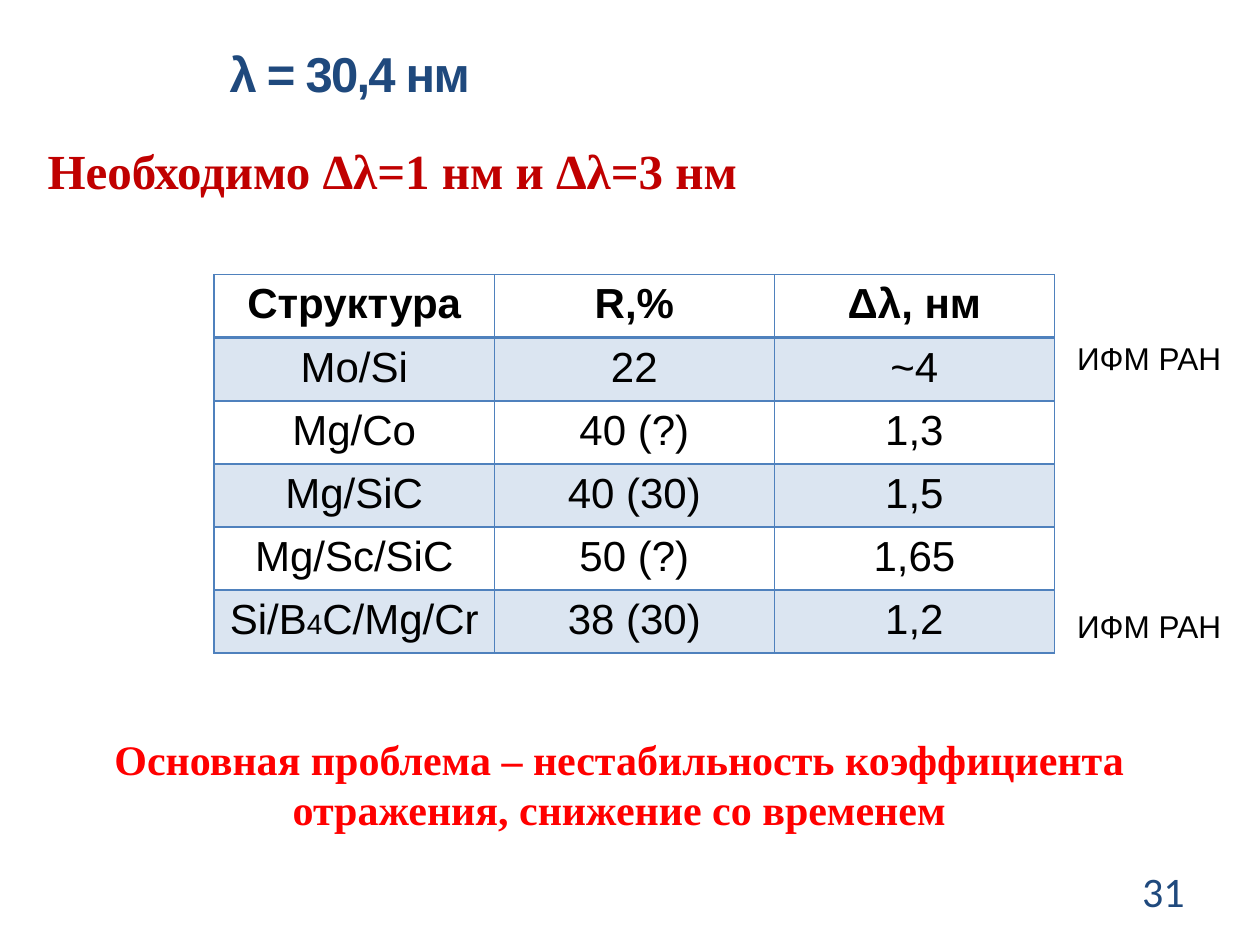
from dataclasses import dataclass

from lxml.etree import SubElement
from pptx import Presentation
from pptx.dml.color import RGBColor
from pptx.enum.text import MSO_ANCHOR as Anchor, PP_ALIGN as Align
from pptx.oxml import parse_xml
from pptx.oxml.ns import nsdecls, qn
from pptx.util import Inches, Pt


@dataclass(frozen=True)
class Theme:
    navy: str = "1F497D"
    crimson: str = "C00000"
    red: str = "FF0000"
    black: str = "000000"
    accent: str = "4F81BD"
    band_alpha: int = 20
    heading: int = 28
    body: int = 24
    label: int = 18
    subscript: int = 16
    sans: str = "Arial"
    serif: str = "Times New Roman"
    number: str = "Calibri"


THEME = Theme()
UNIT = Inches(0.1)  # the slide is a grid of 100 columns by 75 rows
COLUMNS, ROWS = 100, 75

TABLE_LEFT, TABLE_TOP = 17, 21.8
CELL_WIDTH, CELL_HEIGHT = 22.23, 5
TABLE_ROWS = [
    ("Структура", "R,%", "Δλ, нм"),
    ("Mo/Si", "22", "~4"),
    ("Mg/Co", "40 (?)", "1,3"),
    ("Mg/SiC", "40 (30)", "1,5"),
    ("Mg/Sc/SiC", "50 (?)", "1,65"),
    (("Si/B", "4", "C/Mg/Cr"), "38 (30)", "1,2"),
]


def grid(*lengths):
    return [round(length * UNIT) for length in lengths]


def add_run(paragraph, text, color, **font_format):
    run = paragraph.add_run()
    run.text = text
    for name, value in font_format.items():
        setattr(run.font, name, value)
    run.font.color.rgb = RGBColor.from_string(color)
    return run


def add_text(slide, box, text, color, align=Align.LEFT, anchor=Anchor.TOP,
             wrap=True, **font_format):
    frame = slide.shapes.add_textbox(*grid(*box)).text_frame
    frame.word_wrap = wrap
    frame.vertical_anchor = anchor
    paragraph = frame.paragraphs[0]
    paragraph.alignment = align
    return add_run(paragraph, text, color, **font_format)


def set_borders(cell, widths):
    """Draw the cell's edges; widths maps L, R, T, B to points, in that order."""
    properties = cell._tc.get_or_add_tcPr()
    for index, (side, width) in enumerate(widths.items()):
        properties.insert(index, parse_xml(
            f'<a:ln{side} {nsdecls("a")} w="{Pt(width)}"><a:solidFill>'
            f'<a:srgbClr val="{THEME.accent}"/></a:solidFill></a:ln{side}>'))


def fill_band(cell):
    cell.fill.solid()
    cell.fill.fore_color.rgb = RGBColor.from_string(THEME.accent)
    color = cell._tc.tcPr.find(f'{qn("a:solidFill")}/{qn("a:srgbClr")}')
    SubElement(color, qn("a:alpha"), val=str(THEME.band_alpha * 1000))


def fill_cell(cell, content, row):
    paragraph = cell.text_frame.paragraphs[0]
    paragraph.alignment = Align.CENTER
    parts = (content,) if isinstance(content, str) else content
    for index, part in enumerate(parts):
        size = THEME.subscript if index % 2 else THEME.body
        add_run(paragraph, part, THEME.black, size=Pt(size),
                name=THEME.sans, bold=row == 0)
    if row % 2:
        fill_band(cell)
    else:
        cell.fill.background()
    set_borders(cell, {"L": 1, "R": 1, "T": 2 if row == 1 else 1,
                       "B": 2 if row == 0 else 1})


def add_structure_table(slide):
    row_count, column_count = len(TABLE_ROWS), len(TABLE_ROWS[0])
    box = grid(TABLE_LEFT, TABLE_TOP,
               CELL_WIDTH * column_count, CELL_HEIGHT * row_count)
    table = slide.shapes.add_table(row_count, column_count, *box).table
    table.first_row = table.horz_banding = False
    for row, contents in enumerate(TABLE_ROWS):
        for column, content in enumerate(contents):
            fill_cell(table.cell(row, column), content, row)


def main():
    presentation = Presentation()
    presentation.slide_width, presentation.slide_height = grid(COLUMNS, ROWS)
    slide = presentation.slides.add_slide(presentation.slide_layouts[6])

    title = add_text(slide, (0, 2.9, 55.5, 5.7), "λ = 30,4 нм", THEME.navy,
                     Align.CENTER, Anchor.MIDDLE,
                     size=Pt(THEME.heading), name=THEME.sans, bold=True)
    title.font._element.set("spc", "-100")
    add_text(slide, (2.8, 10.7, 56.9, 5.7), "Необходимо Δλ=1 нм и Δλ=3 нм",
             THEME.crimson, wrap=False,
             size=Pt(THEME.heading), name=THEME.serif, bold=True)
    add_structure_table(slide)
    for top in (26.4, 47.7):
        add_text(slide, (84.5, top, 13.6, 4), "ИФМ РАН", THEME.black,
                 wrap=False, size=Pt(THEME.label), name=THEME.sans)
    add_text(slide, (4.3, 57.7, 89.7, 9.1),
             "Основная проблема – нестабильность коэффициента отражения, "
             "снижение со временем", THEME.red, Align.CENTER,
             size=Pt(THEME.body), name=THEME.serif, bold=True)
    add_text(slide, (71.7, 68.7, 23.3, 4), "31", THEME.navy, Align.RIGHT,
             Anchor.MIDDLE, size=Pt(THEME.body), name=THEME.number)

    presentation.save("out.pptx")


if __name__ == "__main__":
    main()
